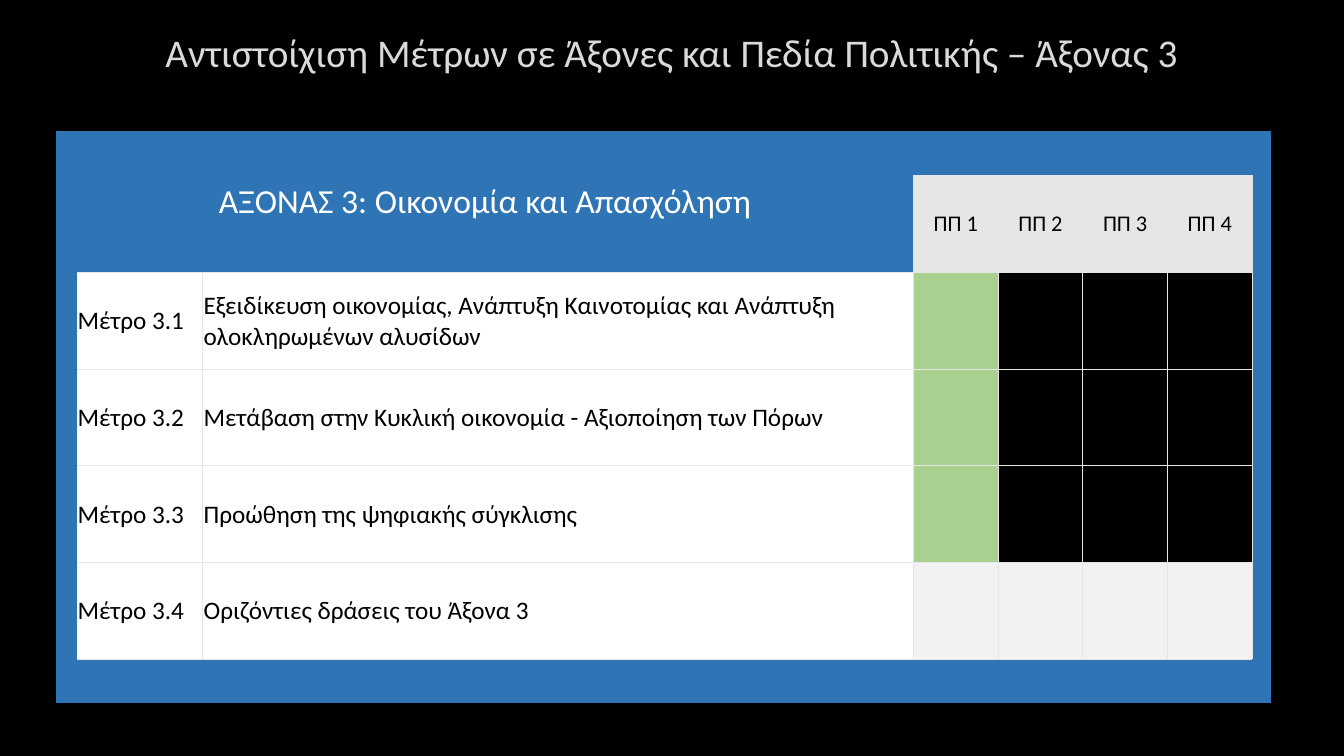
from dataclasses import dataclass

from lxml import etree
from pptx import Presentation
from pptx.dml.color import RGBColor
from pptx.enum.text import MSO_ANCHOR, MSO_AUTO_SIZE, PP_ALIGN
from pptx.oxml.ns import qn
from pptx.util import Inches, Pt

MIDDLE = MSO_ANCHOR.MIDDLE
NO_FIT = MSO_AUTO_SIZE.NONE
LEFT, CENTER = PP_ALIGN.LEFT, PP_ALIGN.CENTER
TITLE_ONLY = 5


@dataclass
class Theme:
    font: str = "Calibri"
    back: str = "000000"
    title: str = "DADADA"
    edge: str = "404040"
    blue: str = "2F75B5"
    grey: str = "E7E6E6"
    pale: str = "F2F2F2"
    green: str = "A9D08E"
    white: str = "FFFFFF"
    black: str = "000000"
    title_size: int = 28
    axis_size: int = 24
    body_size: int = 18
    head_size: int = 16


def assign(target, values):
    for name, value in values.items():
        setattr(target, name, value)


def make_line(tag, width, color=None, alpha=None):
    """Build a line element; without a colour the line is empty."""
    line = etree.Element(qn(tag), w=str(Pt(width)))
    if color is None:
        etree.SubElement(line, qn("a:noFill"))
        return line
    fill = etree.SubElement(line, qn("a:solidFill"))
    tint = etree.SubElement(fill, qn("a:srgbClr"), val=color)
    if alpha is not None:
        etree.SubElement(tint, qn("a:alpha"), val=str(alpha * 1000))
    return line


class Page:
    def __init__(self, deck, theme):
        self.theme = theme
        self.slide = deck.slides.add_slide(deck.slide_layouts[TITLE_ONLY])
        fill = self.slide.background.fill
        fill.solid()
        fill.fore_color.rgb = RGBColor.from_string(theme.back)

    def label(self, frame, text, size, color, align):
        para = frame.paragraphs[0]
        para.alignment = align
        run = para.add_run()
        run.text = text
        assign(run.font, {"name": self.theme.font, "size": Pt(size)})
        run.font.color.rgb = RGBColor.from_string(color)
        return run

    def title(self, text, left, top, width, height):
        shape = self.slide.shapes.title
        assign(shape, {"left": Inches(left), "top": Inches(top),
                       "width": Inches(width), "height": Inches(height)})
        assign(shape.text_frame, {"auto_size": NO_FIT, "word_wrap": True,
                                  "vertical_anchor": MIDDLE})
        look = self.theme
        run = self.label(shape.text_frame, text, look.title_size, look.title, CENTER)
        props = run._r.get_or_add_rPr()
        props.insert(0, make_line("a:ln", 0.75, look.edge, 10))

    def table(self, left, top, cols, rows):
        frame = self.slide.shapes.add_table(
            len(rows), len(cols), Inches(left), Inches(top),
            Inches(sum(cols)), Inches(sum(rows)))
        grid = frame.table
        assign(grid, {"first_row": False, "horz_banding": False})
        for col, width in zip(grid.columns, cols):
            col.width = Inches(width)
        for row, height in zip(grid.rows, rows):
            row.height = Inches(height)
        return grid

    def cell(self, cell, fill, lines):
        thin = Inches(0.01)
        assign(cell, {"vertical_anchor": MIDDLE, "margin_left": thin,
                      "margin_right": thin, "margin_top": thin, "margin_bottom": 0})
        if fill:
            cell.fill.solid()
            cell.fill.fore_color.rgb = RGBColor.from_string(fill)
        else:
            cell.fill.background()
        props = cell._tc.get_or_add_tcPr()
        for index, (side, shown) in enumerate(lines.items()):
            color = self.theme.grey if shown else None
            props.insert(index, make_line("a:ln" + side, 0.5, color))


COLS = [0.2, 1.25, 7.05] + [0.84] * 4 + [0.19]
ROWS = [0.44] + [0.96] * 5 + [0.44]
FIELDS = range(3, 7)
MEASURES = [
    "Εξειδίκευση οικονομίας, Ανάπτυξη Καινοτομίας και Ανάπτυξη ολοκληρωμένων αλυσίδων",
    "Μετάβαση στην Κυκλική οικονομία - Αξιοποίηση των Πόρων",
    "Προώθηση της ψηφιακής σύγκλισης",
    "Οριζόντιες δράσεις του Άξονα 3",
]


def inside(row, col):
    """True for cells within the blue frame."""
    return (row == 1 and col in FIELDS) or (2 <= row <= 5 and 1 <= col <= 6)


def pick_fill(row, col, theme):
    if not inside(row, col):
        return theme.blue
    if row == 1:
        return theme.grey
    if col < 3:
        return theme.white
    if row == 5:
        return theme.pale
    return theme.green if col == 3 else None


def pick_lines(row, col):
    """Rule every inner cell, but leave the far left edge and the heading bare."""
    near = {"L": (row, col - 1), "R": (row, col + 1),
            "T": (row - 1, col), "B": (row + 1, col)}
    bare = {"L": col == 1, "R": col == 0, "T": False, "B": False}
    heading = row < 2 and col < 3
    return {side: not heading and not bare[side]
            and (inside(row, col) or inside(*spot))
            for side, spot in near.items()}


def main():
    deck = Presentation()
    assign(deck, {"slide_width": Inches(13.33), "slide_height": Inches(7.5)})
    theme = Theme()
    page = Page(deck, theme)

    # Title
    page.title("Αντιστοίχιση Μέτρων σε Άξονες και Πεδία Πολιτικής – Άξονας 3",
               1, 0.16, 11.32, 0.71)

    # Table fills and rules
    grid = page.table(0.56, 1.3, COLS, ROWS)
    for row in range(len(ROWS)):
        for col in range(len(COLS)):
            page.cell(grid.cell(row, col), pick_fill(row, col, theme),
                      pick_lines(row, col))

    # Axis heading
    axis = grid.cell(0, 0)
    axis.merge(grid.cell(1, 2))
    page.label(axis.text_frame, "ΑΞΟΝΑΣ 3: Οικονομία και Απασχόληση",
               theme.axis_size, theme.white, CENTER)

    # Policy fields
    for number, col in enumerate(FIELDS, 1):
        page.label(grid.cell(1, col).text_frame, f"ΠΠ {number}",
                   theme.head_size, theme.black, CENTER)

    # Measures
    for number, text in enumerate(MEASURES, 1):
        for col, words in ((1, f"Μέτρο 3.{number}"), (2, text)):
            page.label(grid.cell(number + 1, col).text_frame, words,
                       theme.body_size, theme.black, LEFT)

    deck.save("out.pptx")


if __name__ == "__main__":
    main()
